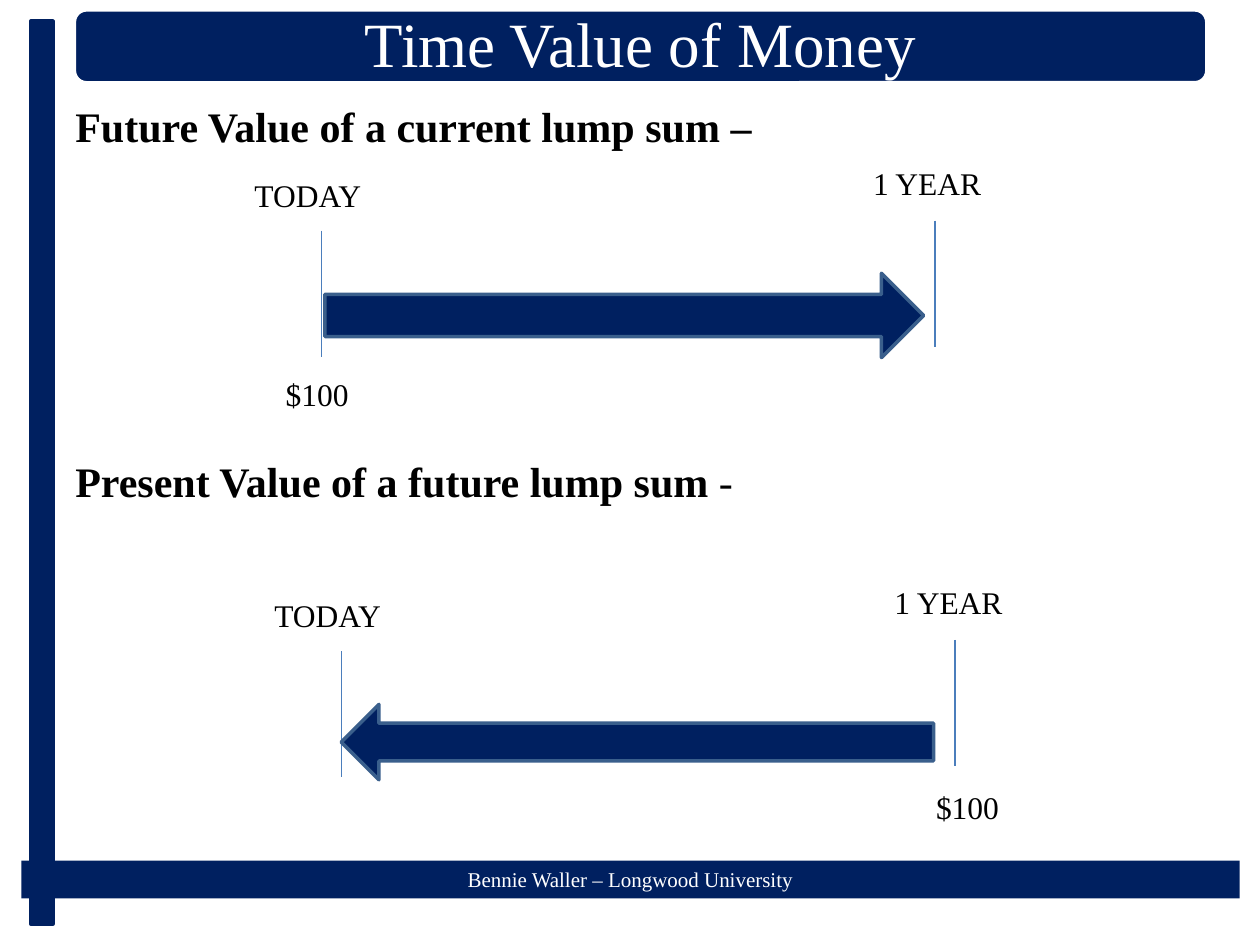
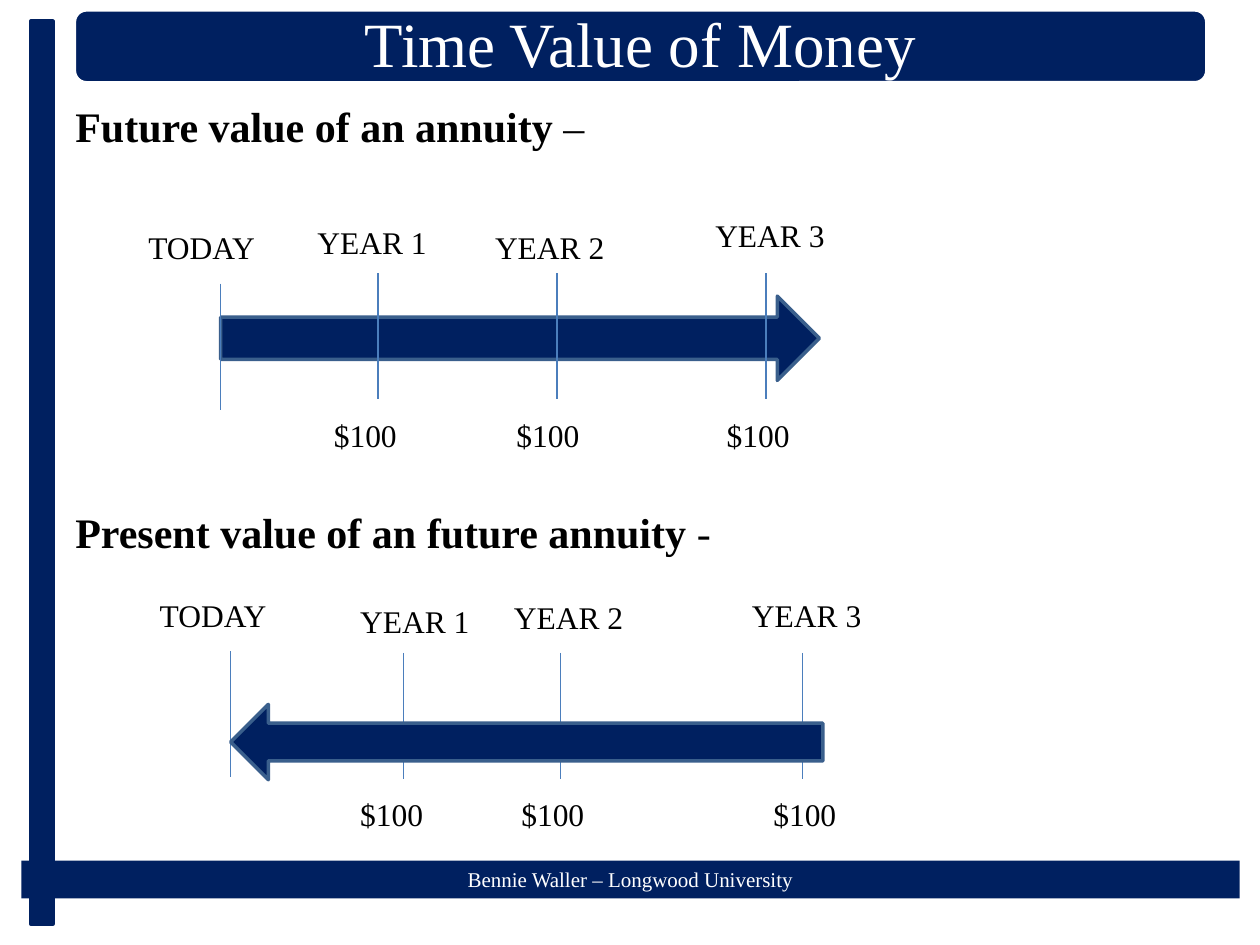
from lxml.etree import SubElement
from pptx import Presentation
from pptx.dml.color import RGBColor
from pptx.enum.shapes import MSO_CONNECTOR as CONN, MSO_SHAPE as SHAPE
from pptx.enum.text import MSO_ANCHOR as ANCHOR, PP_ALIGN as ALIGN
from pptx.oxml.ns import qn
from pptx.util import Cm, Pt

COLORS = {
    "navy": "002060",
    "white": "FFFFFF",
    "black": "000000",
    "arrow_edge": "3A5F8C",
    "tick": "4B7EBC",
}
FONT = "Times New Roman"
TICK_HEIGHT = 2.54
LABEL_SIZE = (2.97, 1.02)
FUTURE_ARROW = (SHAPE.RIGHT_ARROW, 12.07, 1.7)
PRESENT_ARROW = (SHAPE.LEFT_ARROW, 11.94, 1.52)


def rgb(name):
    return RGBColor.from_string(COLORS[name])


def style_run(r, size, color="black", bold=False):
    r.font.name = FONT
    r.font.size = Pt(size)
    r.font.bold = bold
    r.font.color.rgb = rgb(color)


def add_block(s, kind, box, edge=None, width=2):
    sp = s.shapes.add_shape(kind, *map(Cm, box))
    sp.shadow.inherit = False
    sp.fill.solid()
    sp.fill.fore_color.rgb = rgb("navy")
    if edge:
        sp.line.color.rgb = rgb(edge)
        sp.line.width = Pt(width)
    else:
        sp.line.fill.background()
    return sp


def add_textbox(s, box):
    tf = s.shapes.add_textbox(*map(Cm, box)).text_frame
    tf.word_wrap = True
    return tf


def write_line(tf, text, size, color="black", align=ALIGN.LEFT):
    p = tf.paragraphs[0]
    p.text = text
    p.alignment = align
    style_run(p.runs[0], size, color)
    return p


def add_frame(s, title):
    footer = add_block(s, SHAPE.RECTANGLE, (0.43, 17.35, 24.56, 0.76))
    write_line(footer.text_frame, "Bennie Waller – Longwood University",
               12, "white", ALIGN.CENTER)
    add_block(s, SHAPE.RECTANGLE, (0.63, 0.43, 0.43, 18.2), "navy", 2.5)
    add_block(s, SHAPE.ROUNDED_RECTANGLE, (1.5, 0.2, 22.83, 1.47), "white")
    tf = add_textbox(s, (1.57, 0.28, 22.68, 1.35))
    tf.vertical_anchor = ANCHOR.MIDDLE
    tf.margin_left = tf.margin_right = Cm(0.38)
    tf.margin_top = tf.margin_bottom = Cm(0.18)
    write_line(tf, title, 36, "white", ALIGN.CENTER).line_spacing = 0.9


def add_headings(s, headings, gap):
    tf = add_textbox(s, (1.27, 1.9, 23.5, 14.63))
    for i, (strong, plain) in enumerate(headings):
        p = tf.add_paragraph() if i else tf.paragraphs[0]
        p.space_before = Pt(gap * i)
        for text, bold in ((strong, True), (plain, False)):
            if text:
                r = p.add_run()
                r.text = text
                style_run(r, 24, bold=bold)


def add_tick(s, x, y):
    line = s.shapes.add_connector(
        CONN.STRAIGHT, Cm(x), Cm(y), Cm(x), Cm(y + TICK_HEIGHT))
    line.line.color.rgb = rgb("tick")
    line.line.width = Pt(0.75)
    SubElement(line._element.spPr, qn("a:effectLst"))


def add_label(s, text, x, y):
    write_line(add_textbox(s, (x, y, *LABEL_SIZE)), text, 18)


def add_arrow(s, arrow, x, y):
    kind, width, height = arrow
    add_block(s, kind, (x, y, width, height), "arrow_edge")


def add_timeline(s, arrow, arrow_at, ticks, periods, payment_xs, payment_y):
    if arrow is FUTURE_ARROW:
        add_arrow(s, arrow, *arrow_at)
    for x, y in ticks:
        add_tick(s, x, y)
    for text, x, y in periods:
        add_label(s, text, x, y)
    for x in payment_xs:
        add_label(s, "$100", x, payment_y)
    if arrow is PRESENT_ARROW:
        add_arrow(s, arrow, *arrow_at)


def add_slide(prs, headings, gap):
    s = prs.slides.add_slide(prs.slide_layouts[6])
    add_frame(s, "Time Value of Money")
    add_headings(s, headings, gap)
    return s


def add_lump_sum_slide(prs):
    s = add_slide(prs, [("Future Value of a current lump sum –", ""),
                        ("Present Value of a future lump sum ", "-")], 174)
    add_timeline(s, FUTURE_ARROW, (6.55, 5.51),
                 [(6.48, 4.65), (18.85, 4.45)],
                 [("TODAY", 4.88, 3.43), ("1 YEAR", 17.35, 3.18)],
                 [5.51], 7.44)
    add_timeline(s, PRESENT_ARROW, (6.88, 14.2),
                 [(6.88, 13.13), (19.25, 12.9)],
                 [("TODAY", 5.28, 11.89), ("1 YEAR", 17.78, 11.63)],
                 [18.62], 15.77)


def add_annuity_slide(prs):
    s = add_slide(prs, [("Future value of an annuity ", "–"),
                        ("Present value of an future annuity", " -")], 203)
    add_timeline(s, FUTURE_ARROW, (4.45, 5.97),
                 [(4.45, 5.72)] + [(x, 5.51) for x in (7.62, 11.23, 15.44)],
                 [("TODAY", 2.74, 4.47), ("YEAR 1", 6.15, 4.37),
                  ("YEAR 2", 9.73, 4.47), ("YEAR 3", 14.17, 4.24)],
                 [6.48, 10.16, 14.4], 8.26)
    add_timeline(s, PRESENT_ARROW, (4.65, 14.2),
                 [(4.65, 13.13)] + [(x, 13.16) for x in (8.13, 11.3, 16.18)],
                 [("TODAY", 2.97, 11.89), ("YEAR 1", 7.01, 12.01),
                  ("YEAR 2", 10.11, 11.94), ("YEAR 3", 14.91, 11.89)],
                 [7.01, 10.26, 15.34], 15.9)


def main():
    prs = Presentation()
    prs.slide_width = Cm(25.4)
    prs.slide_height = Cm(19.05)
    add_lump_sum_slide(prs)
    add_annuity_slide(prs)
    prs.save("out.pptx")


if __name__ == "__main__":
    main()
